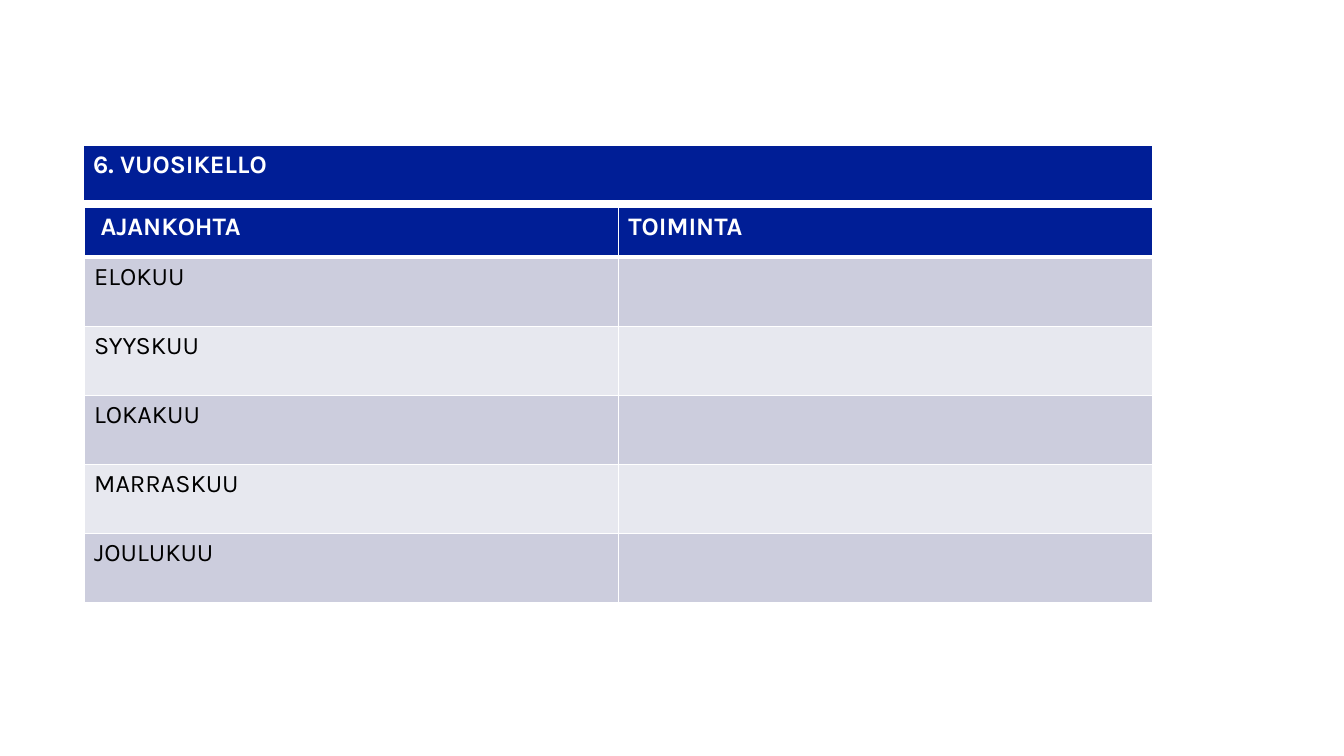
from dataclasses import dataclass

from lxml.etree import SubElement
from pptx import Presentation
from pptx.dml.color import RGBColor as Color
from pptx.oxml.ns import qn
from pptx.util import Cm, Pt


@dataclass(frozen=True)
class Theme:
    font: str = "Karla"
    text_size: int = 18
    header_fill: str = "001E96"
    header_text: str = "FFFFFF"
    body_text: str = "000000"
    bands: tuple = ("CCCDDD", "E7E8EF")
    border: str = "FFFFFF"
    thin: int = 1
    thick: int = 3


class SlideBuilder:
    def __init__(self, slide, theme):
        self.slide = slide
        self.theme = theme

    def add_table(self, left, top, width, row_heights, rows):
        """Add a table with a header row and banded body rows; lengths in cm."""
        column_count = len(rows[0])
        frame = self.slide.shapes.add_table(
            len(rows), column_count, Cm(left), Cm(top), Cm(width), Cm(sum(row_heights))
        )
        table = frame.table
        for column in table.columns:
            column.width = Cm(width / column_count)
        for row_index, (height, texts) in enumerate(zip(row_heights, rows)):
            table.rows[row_index].height = Cm(height)
            for column_index, text in enumerate(texts):
                self.format_cell(table.cell(row_index, column_index), text, row_index)

    def format_cell(self, cell, text, row_index):
        theme = self.theme
        is_header = row_index == 0
        self.add_borders(
            cell,
            top=theme.thick if row_index == 1 else theme.thin,
            bottom=theme.thick if is_header else theme.thin,
        )
        cell.fill.solid()
        fill = theme.header_fill if is_header else theme.bands[(row_index - 1) % 2]
        cell.fill.fore_color.rgb = Color.from_string(fill)
        cell.text_frame.text = text
        font = cell.text_frame.paragraphs[0].font
        font.name = theme.font
        font.size = Pt(theme.text_size)
        for run in cell.text_frame.paragraphs[0].runs:
            run.font.name = theme.font
            run.font.size = Pt(theme.text_size)
            run.font.bold = is_header
            color = theme.header_text if is_header else theme.body_text
            run.font.color.rgb = Color.from_string(color)

    def add_borders(self, cell, top, bottom):
        properties = cell._tc.get_or_add_tcPr()
        widths = {"L": self.theme.thin, "R": self.theme.thin, "T": top, "B": bottom}
        for side, width in widths.items():
            line = SubElement(properties, qn(f"a:ln{side}"), w=str(Pt(width)))
            fill = SubElement(line, qn("a:solidFill"))
            SubElement(fill, qn("a:srgbClr"), val=self.theme.border)


def main():
    presentation = Presentation()
    presentation.slide_width = Cm(33.87)
    presentation.slide_height = Cm(19.05)
    blank_layout = presentation.slide_layouts[6]
    builder = SlideBuilder(presentation.slides.add_slide(blank_layout), Theme())

    months = ["ELOKUU", "SYYSKUU", "LOKAKUU", "MARRASKUU", "JOULUKUU"]
    calendar = [(" AJANKOHTA", "TOIMINTA")] + [(month, "") for month in months]
    builder.add_table(2.12, 5.23, 26.92, [1.25] + [1.74] * len(months), calendar)
    builder.add_table(2.09, 3.67, 26.95, [1.41], [("6. VUOSIKELLO",)])

    presentation.save("out.pptx")


if __name__ == "__main__":
    main()
